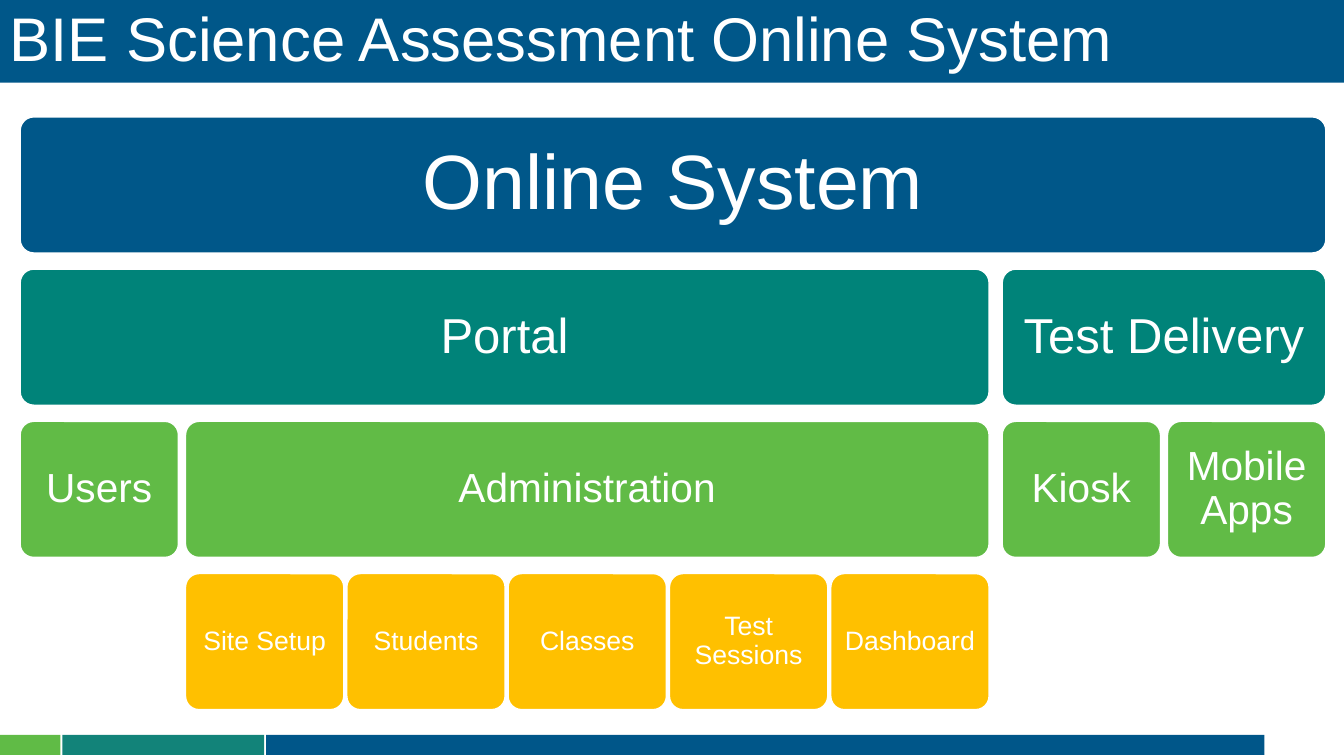
from dataclasses import dataclass

from pptx import Presentation
from pptx.dml.color import RGBColor
from pptx.enum.shapes import MSO_SHAPE
from pptx.enum.text import MSO_ANCHOR, PP_ALIGN
from pptx.shapes.autoshape import Shape
from pptx.slide import Slide
from pptx.util import Inches, Pt

WHITE = RGBColor(0xFF, 0xFF, 0xFF)
BLUE = RGBColor(0x00, 0x57, 0x89)
TEAL = RGBColor(0x00, 0x83, 0x79)
GREEN = RGBColor(0x61, 0xBB, 0x46)
AMBER = RGBColor(0xFF, 0xC0, 0x00)
FOOTER_GREEN = RGBColor(0x60, 0xBB, 0x46)
FOOTER_TEAL = RGBColor(0x12, 0x83, 0x79)
FOOTER_BLUE = RGBColor(0x00, 0x56, 0x89)

TREE_LEFT, TREE_TOP = 0.2, 1.16
LEAF_WIDTH, BOX_HEIGHT, ROW_PITCH = 1.57, 1.35, 1.51


@dataclass(frozen=True)
class Level:
    color: RGBColor
    size: int
    inset: float
    gap: float  # between neighbouring boxes


@dataclass(frozen=True)
class Node:
    label: str
    children: tuple["Node", ...] = ()


@dataclass(frozen=True)
class Band:
    left: float
    width: float
    color: RGBColor


LEVELS = (
    Level(BLUE, 55, 0.23, 0),
    Level(TEAL, 35, 0.15, 0.13),
    Level(GREEN, 29, 0.12, 0.07),
    Level(AMBER, 19, 0.08, 0.03),
)

TASKS = ("Site Setup", "Students", "Classes", "Test Sessions", "Dashboard")
SYSTEM = Node("Online System", (
    Node("Portal", (
        Node("Users"),
        Node("Administration", tuple(Node(task) for task in TASKS)),
    )),
    Node("Test Delivery", (Node("Kiosk"), Node("Mobile Apps"))),
))

FOOTER = (
    Band(0, 0.6, FOOTER_GREEN),
    Band(0.62, 2, FOOTER_TEAL),
    Band(2.64, 9.9, FOOTER_BLUE),
)


def set_values(target: object, values: dict[str, object]) -> None:
    for name, value in values.items():
        setattr(target, name, value)


def add_box(page: Slide, kind: MSO_SHAPE, left: float, top: float,
            width: float, height: float, color: RGBColor) -> Shape:
    box = page.shapes.add_shape(
        kind, Inches(left), Inches(top), Inches(width), Inches(height))
    box.shadow.inherit = False
    box.fill.solid()
    box.fill.fore_color.rgb = color
    box.line.fill.background()
    return box


def write(box: Shape, text: str, size: int, align: PP_ALIGN,
          side: float, edge: float) -> None:
    """Fill the box with one paragraph; side and edge are its insets."""
    frame = box.text_frame
    set_values(frame, {
        "word_wrap": True,
        "vertical_anchor": MSO_ANCHOR.MIDDLE,
        "margin_left": Inches(side),
        "margin_right": Inches(side),
        "margin_top": Inches(edge),
        "margin_bottom": Inches(edge),
    })
    para = frame.paragraphs[0]
    set_values(para, {"alignment": align, "line_spacing": 0.9})
    span = para.add_run()
    span.text = text
    set_values(span.font, {"name": "Arial", "size": Pt(size)})
    span.font.color.rgb = WHITE


def node_width(node: Node, depth: int) -> float:
    if not node.children:
        return LEAF_WIDTH
    gaps = LEVELS[depth + 1].gap * (len(node.children) - 1)
    return gaps + sum(node_width(child, depth + 1) for child in node.children)


def add_node(page: Slide, node: Node, left: float, depth: int = 0) -> None:
    """Draw a node and, in the row beneath it, its children side by side."""
    level = LEVELS[depth]
    box = add_box(page, MSO_SHAPE.ROUNDED_RECTANGLE, left,
                  TREE_TOP + depth * ROW_PITCH, node_width(node, depth),
                  BOX_HEIGHT, level.color)
    box.adjustments[0] = 0.1
    box.line.color.rgb = WHITE
    box.line.width = Pt(1)
    write(box, node.label, level.size, PP_ALIGN.CENTER, level.inset, level.inset)
    for child in node.children:
        add_node(page, child, left, depth + 1)
        left += node_width(child, depth + 1) + LEVELS[depth + 1].gap


def main() -> None:
    deck = Presentation()
    deck.slide_width, deck.slide_height = Inches(13.33), Inches(7.5)
    page = deck.slides.add_slide(deck.slide_layouts[6])
    for band in FOOTER:
        add_box(page, MSO_SHAPE.RECTANGLE, band.left, 7.29, band.width, 0.2,
                band.color)
    title = add_box(page, MSO_SHAPE.RECTANGLE, 0, 0, 13.33, 0.82, BLUE)
    write(title, "BIE Science Assessment Online System", 44, PP_ALIGN.LEFT,
          0.1, 0.05)
    add_node(page, SYSTEM, TREE_LEFT)
    deck.save("out.pptx")


if __name__ == "__main__":
    main()
